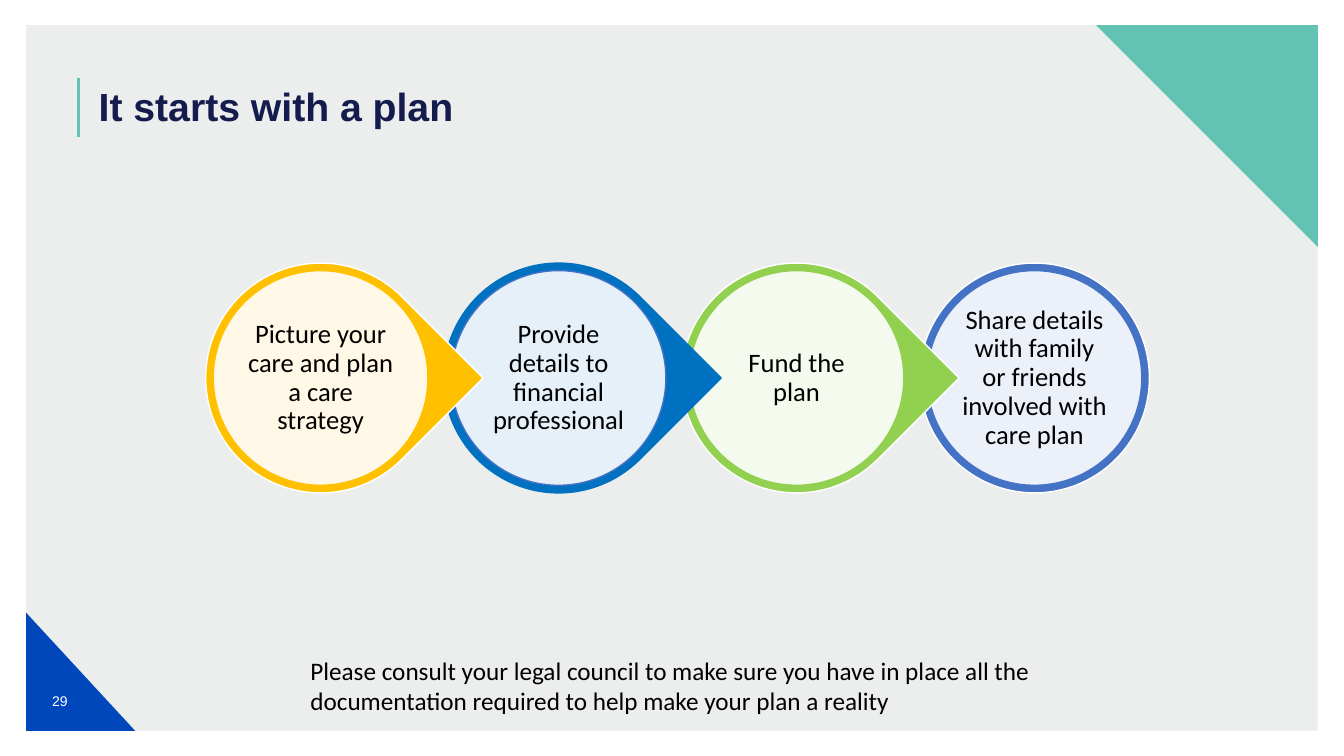
import pptx
import pptx.util
import pptx.dml.color
import pptx.enum.shapes
import pptx.enum.text
import pptx.oxml.ns
import lxml.etree

Inches, Pt = pptx.util.Inches, pptx.util.Pt
RGBColor = pptx.dml.color.RGBColor
MSO_SHAPE = pptx.enum.shapes.MSO_SHAPE
PP_ALIGN = pptx.enum.text.PP_ALIGN
MSO_ANCHOR = pptx.enum.text.MSO_ANCHOR
qn = pptx.oxml.ns.qn

WHITE = RGBColor(0xFF, 0xFF, 0xFF)
BLACK = RGBColor(0, 0, 0)
GREY = RGBColor(0xD0, 0xD3, 0xD4)
NAVY = RGBColor(0x14, 0x1B, 0x4D)
COBALT = RGBColor(0x00, 0x47, 0xBB)
TEAL = RGBColor(0x63, 0xC3, 0xB2)
AMBER = RGBColor(0xFF, 0xC0, 0x00)
BLUE = RGBColor(0x00, 0x70, 0xC0)
GREEN = RGBColor(0x92, 0xD0, 0x50)
INDIGO = RGBColor(0x44, 0x72, 0xC4)

TITLE = "It starts with a plan"
PAGE_NUMBER = "29"
ADVICE = ("Please consult your legal council to make sure you have in place all the "
          "documentation required to help make your plan a reality")
# wording, ring fill, ring outline, disc outline
STEPS = [
    ("Picture your care and plan a care strategy", AMBER, WHITE, AMBER),
    ("Provide details to financial professional", BLUE, BLUE, INDIGO),
    ("Fund the plan", GREEN, WHITE, GREEN),
    ("Share details with family or friends involved with care plan", INDIGO, WHITE, INDIGO),
]

SLIDE_W, SLIDE_H = 13.33, 7.5
PANEL = (0.26, 0.25, 12.81, 7)
PANEL_RIGHT, PANEL_BOTTOM = PANEL[0] + PANEL[2], PANEL[1] + PANEL[3]
STEP_PITCH = 2.36
FIRST_CENTER_X, CENTER_Y = 3.18, 3.75
RING, DISC, LABEL = 2.28, 2.13, 1.52


def add_filled(slide, kind, box, fill, outline=None, opacity=100, rotation=0):
    shape = slide.shapes.add_shape(kind, *map(Inches, box))
    shape.shadow.inherit = False
    shape.rotation = rotation
    shape.fill.solid()
    shape.fill.fore_color.rgb = fill
    if opacity < 100:
        color = shape.fill._xPr.find(qn("a:solidFill"))[0]
        lxml.etree.SubElement(color, qn("a:alpha"), val=str(opacity * 1000))
    if outline is None:
        shape.line.fill.background()
    else:
        shape.line.color.rgb = outline
        shape.line.width = Pt(1)


def add_text(slide, box, text, size, color, font="Calibri", bold=False,
             align=PP_ALIGN.LEFT, anchor=MSO_ANCHOR.TOP):
    frame = slide.shapes.add_textbox(*map(Inches, box)).text_frame
    frame.word_wrap = True
    frame.vertical_anchor = anchor
    frame.text = text
    paragraph = frame.paragraphs[0]
    paragraph.alignment = align
    style = paragraph.runs[0].font
    style.size, style.name, style.bold = Pt(size), font, bold
    style.color.rgb = color
    return frame


def centered(center_x, size):
    """Square box of the given size around a point on the row of steps."""
    return center_x - size / 2, CENTER_Y - size / 2, size, size


def add_step(slide, index):
    wording, fill, ring_outline, disc_outline = STEPS[index]
    center_x = FIRST_CENTER_X + index * STEP_PITCH
    is_last = index == len(STEPS) - 1
    add_filled(slide, MSO_SHAPE.OVAL if is_last else MSO_SHAPE.TEAR,
               centered(center_x, RING), fill, ring_outline,
               rotation=0 if is_last else 45)
    add_filled(slide, MSO_SHAPE.OVAL, centered(center_x, DISC), WHITE, disc_outline, opacity=90)
    label = add_text(slide, centered(center_x, LABEL), wording, 19, BLACK,
                     align=PP_ALIGN.CENTER, anchor=MSO_ANCHOR.MIDDLE)
    label.margin_left = label.margin_right = Inches(0.03)
    label.margin_top = label.margin_bottom = Inches(0.03)
    label.paragraphs[0].line_spacing = 0.9


def add_frame(slide):
    add_filled(slide, MSO_SHAPE.RECTANGLE, PANEL, GREY, opacity=40)
    add_filled(slide, MSO_SHAPE.RIGHT_TRIANGLE,
               (PANEL[0], PANEL_BOTTOM - 1.17, 1.08, 1.17), COBALT)
    add_filled(slide, MSO_SHAPE.RIGHT_TRIANGLE,
               (PANEL_RIGHT - 2.2, PANEL[1], 2.2, 2.2), TEAL, rotation=180)
    title_bar = slide.shapes.add_connector(
        pptx.enum.shapes.MSO_CONNECTOR.STRAIGHT, *map(Inches, (0.78, 0.77, 0.78, 1.36)))
    title_bar.line.color.rgb = TEAL
    title_bar.line.width = Pt(2)
    lxml.etree.SubElement(title_bar._element.spPr, qn("a:effectLst"))


def main():
    deck = pptx.Presentation()
    deck.slide_width, deck.slide_height = Inches(SLIDE_W), Inches(SLIDE_H)
    slide = deck.slides.add_slide(deck.slide_layouts[6])
    add_frame(slide)
    add_text(slide, (0.32, 6.66, 0.55, 0.58), PAGE_NUMBER, 10, WHITE, "Arial",
             align=PP_ALIGN.CENTER, anchor=MSO_ANCHOR.MIDDLE)
    add_text(slide, (0.88, 0.77, 10.21, 0.91), TITLE, 28, NAVY, "Arial", bold=True)
    # Each tip overlaps the next step, so the last step goes at the back.
    for index in reversed(range(len(STEPS))):
        add_step(slide, index)
    add_text(slide, (2.98, 6.45, 7.58, 1.01), ADVICE, 18, BLACK)
    deck.save("out.pptx")


if __name__ == "__main__":
    main()
